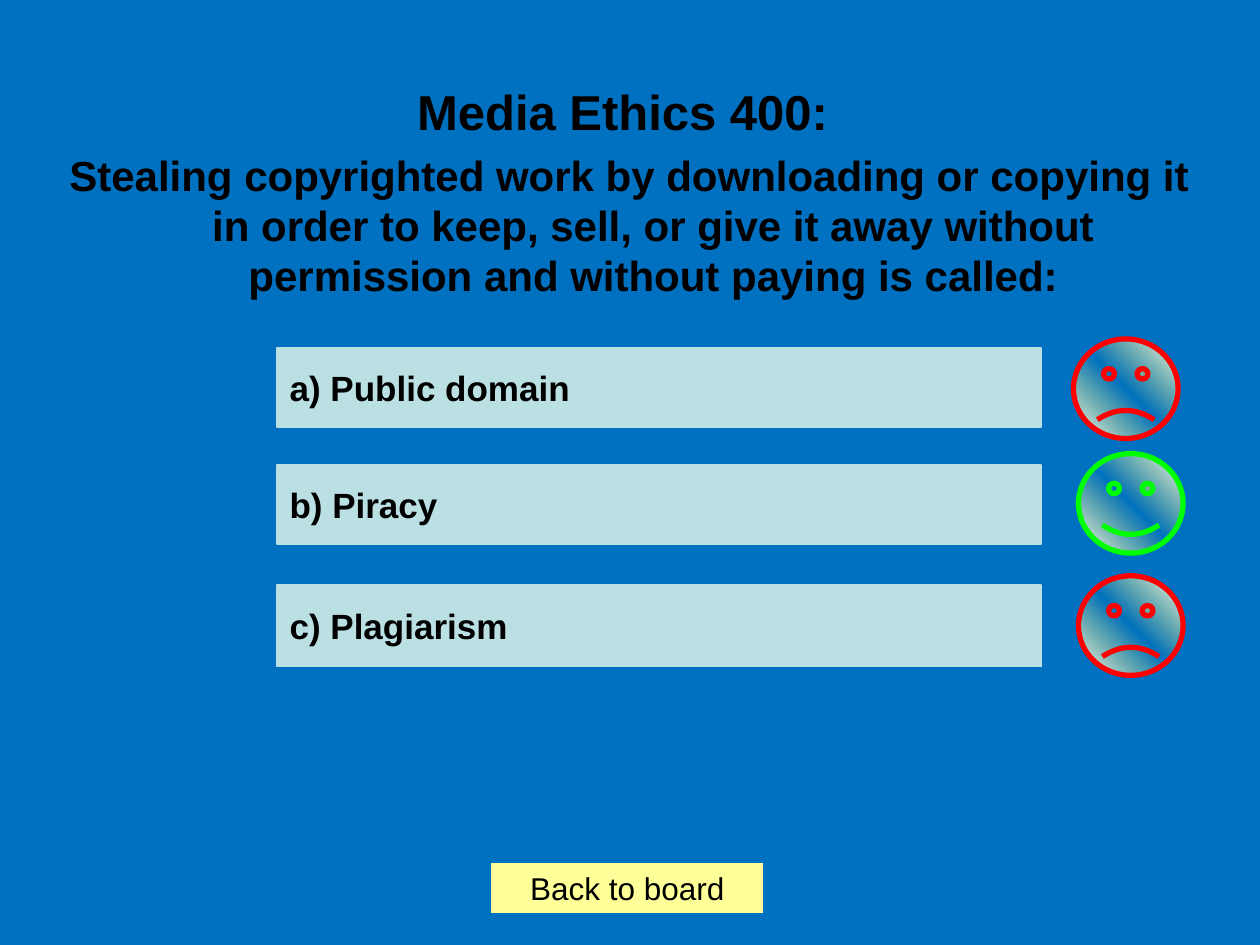
import lxml.etree
import pptx
import pptx.dml.color
import pptx.enum.shapes
import pptx.enum.text
import pptx.oxml
import pptx.oxml.ns
import pptx.util

RGBColor = pptx.dml.color.RGBColor
Shapes = pptx.enum.shapes.MSO_SHAPE
Align = pptx.enum.text.PP_ALIGN
Anchor = pptx.enum.text.MSO_ANCHOR
Inches, Pt = pptx.util.Inches, pptx.util.Pt

BLUE = RGBColor(0x00, 0x70, 0xC0)
PALE_TEAL = RGBColor(0xBB, 0xE0, 0xE3)
PALE_YELLOW = RGBColor(0xFF, 0xFF, 0x99)
BLACK = RGBColor(0, 0, 0)
RED = RGBColor(0xFF, 0, 0)
GREEN = RGBColor(0, 0xFF, 0)

# Content
QUESTION = [
    ("Media Ethics 400: ", 28),
    ("Stealing copyrighted work by downloading or copying it in order to keep, "
     "sell, or give it away without permission and without paying is called:", 24),
]
# text, top, height, face left, face top, is correct
ANSWERS = [
    ("a) Public domain", 2.76, 0.63, 8.52, 2.69, False),
    ("b) Piracy", 3.69, 0.63, 8.56, 3.60, True),
    ("c) Plagiarism", 4.64, 0.65, 8.56, 4.57, False),
]
BACK = "Back to board"

ANSWER_LEFT, ANSWER_WIDTH = 2.2, 6.06
FACE_WIDTH, FACE_HEIGHT, SMILE = 0.83, 0.79, 0.047
HANGING = Inches(0.38)
FACE_GRADIENT = (
    '<a:gradFill rotWithShape="1" %s><a:gsLst>'
    '<a:gs pos="0"><a:srgbClr val="FFFFFF"/></a:gs>'
    '<a:gs pos="50000"><a:srgbClr val="FFFF66"><a:alpha val="0"/></a:srgbClr></a:gs>'
    '<a:gs pos="100000"><a:srgbClr val="FFFFFF"/></a:gs>'
    '</a:gsLst><a:lin ang="18900000" scaled="1"/></a:gradFill>'
    % pptx.oxml.ns.nsdecls("a"))


def write(paragraph, text, size, align, bold=False, hanging=False):
    paragraph.alignment = align
    if hanging:
        properties = paragraph._p.get_or_add_pPr()
        properties.set("marL", str(HANGING))
        properties.set("indent", str(-HANGING))
    run = paragraph.add_run()
    run.text = text
    run.font.name, run.font.size, run.font.bold = "Arial", Pt(size), bold
    run.font.color.rgb = BLACK


def add_plain(kind, left, top, width, height):
    shape = slide.shapes.add_shape(kind, *map(Inches, (left, top, width, height)))
    shape.shadow.inherit = False
    return shape


def add_button(box, fill, text, size, align, line=None, **style):
    button = add_plain(Shapes.ACTION_BUTTON_CUSTOM, *box)
    button.fill.solid()
    button.fill.fore_color.rgb = fill
    if line is None:
        button.line.fill.background()
    else:
        button.line.color.rgb = line
        button.line.width = Pt(1)
    frame = button.text_frame
    frame.word_wrap = False
    frame.vertical_anchor = Anchor.MIDDLE
    write(frame.paragraphs[0], text, size, align, **style)


def add_face(left, top, correct):
    face = add_plain(Shapes.SMILEY_FACE, left, top, FACE_WIDTH, FACE_HEIGHT)
    face.adjustments[0] = SMILE if correct else -SMILE
    face.line.color.rgb = GREEN if correct else RED
    face.line.width = Pt(3)
    outline = face._element.spPr.find(pptx.oxml.ns.qn("a:ln"))
    outline.addprevious(pptx.oxml.parse_xml(FACE_GRADIENT))


deck = pptx.Presentation()
deck.slide_width, deck.slide_height = Inches(10), Inches(7.5)
slide = deck.slides.add_slide(deck.slide_layouts[5])
slide.background.fill.solid()
slide.background.fill.fore_color.rgb = BLUE

# Question
question = slide.shapes.title
question.left, question.top, question.width, question.height = map(
    Inches, (0.39, 0.6, 9.21, 0.75))
frame = question.text_frame
frame.word_wrap = True
frame.auto_size = pptx.enum.text.MSO_AUTO_SIZE.NONE
frame.vertical_anchor = Anchor.TOP
for number, (text, size) in enumerate(QUESTION):
    paragraph = frame.add_paragraph() if number else frame.paragraphs[0]
    paragraph.space_before = Pt(size * 0.2)
    write(paragraph, text, size, Align.CENTER, bold=True, hanging=True)

# Answers and their verdict faces
for text, top, height, face_left, face_top, correct in ANSWERS:
    add_button((ANSWER_LEFT, top, ANSWER_WIDTH, height), PALE_TEAL, text, 20,
               Align.LEFT, line=PALE_TEAL, bold=True, hanging=True)
    add_face(face_left, face_top, correct)

# Way back
add_button((3.9, 6.85, 2.16, 0.4), PALE_YELLOW, BACK, 18, Align.CENTER)

deck.save("out.pptx")
